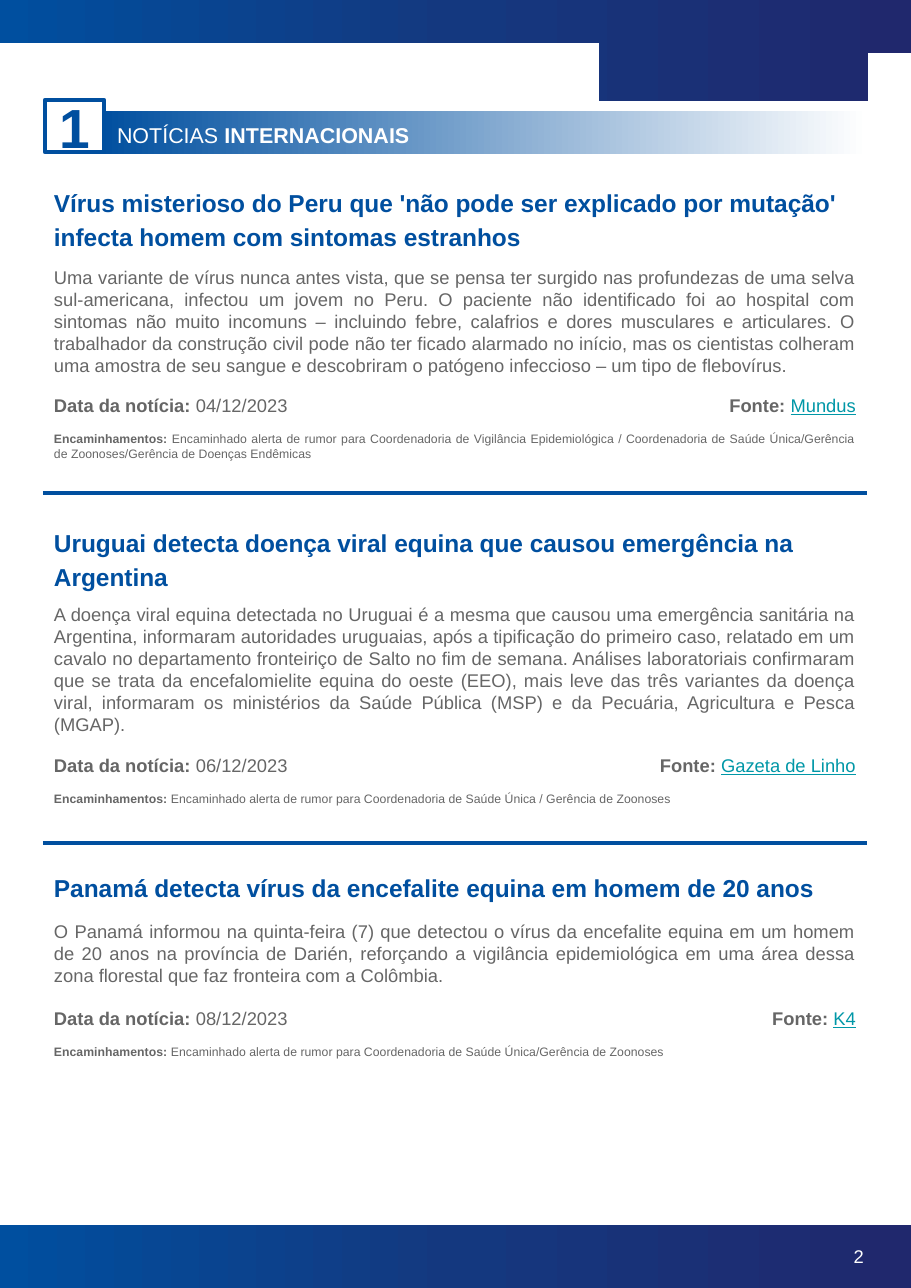
from dataclasses import dataclass
from lxml import etree
from pptx import Presentation
from pptx import util as u
from pptx.dml.color import RGBColor
from pptx.enum import shapes, text
from pptx.oxml.ns import qn

NEWS = [
    {"tops": (173, 255, 383), "rule": 493,
     "head": "Vírus misterioso do Peru que 'não pode ser explicado por mutação' infecta homem com sintomas estranhos",
     "body": "Uma variante de vírus nunca antes vista, que se pensa ter surgido nas profundezas de uma selva sul-americana, infectou um jovem no Peru. O paciente não identificado foi ao hospital com sintomas não muito incomuns – incluindo febre, calafrios e dores musculares e articulares. O trabalhador da construção civil pode não ter ficado alarmado no início, mas os cientistas colheram uma amostra de seu sangue e descobriram o patógeno infeccioso – um tipo de flebovírus.",
     "date": "04/12/2023", "source": "Mundus",
     "action": "Encaminhado alerta de rumor para Coordenadoria de Vigilância Epidemiológica / Coordenadoria de Saúde Única/Gerência de Zoonoses/Gerência de Doenças Endêmicas"},
    {"tops": (513, 592, 743), "rule": 843,
     "head": "Uruguai detecta doença viral equina que causou emergência na Argentina",
     "body": "A doença viral equina detectada no Uruguai é a mesma que causou uma emergência sanitária na Argentina, informaram autoridades uruguaias, após a tipificação do primeiro caso, relatado em um cavalo no departamento fronteiriço de Salto no fim de semana. Análises laboratoriais confirmaram que se trata da encefalomielite equina do oeste (EEO), mais leve das três variantes da doença viral, informaram os ministérios da Saúde Pública (MSP) e da Pecuária, Agricultura e Pesca (MGAP).",
     "date": "06/12/2023", "source": "Gazeta de Linho",
     "action": "Encaminhado alerta de rumor para Coordenadoria de Saúde Única / Gerência de Zoonoses"},
    {"tops": (858, 909, 996), "rule": None,
     "head": "Panamá detecta vírus da encefalite equina em homem de 20 anos",
     "body": "O Panamá informou na quinta-feira (7) que detectou o vírus da encefalite equina em um homem de 20 anos na província de Darién, reforçando a vigilância epidemiológica em uma área dessa zona florestal que faz fronteira com a Colômbia.",
     "date": "08/12/2023", "source": "K4",
     "action": "Encaminhado alerta de rumor para Coordenadoria de Saúde Única/Gerência de Zoonoses"},
]
WIDE, HIGH = 911, 1288
LEFT, SPAN = 43, 824
PAD = 11
SCALE = 914400 / 110.2


@dataclass(frozen=True)
class Theme:
    blue: str = "004F9F"
    mid: str = "14387F"
    navy: str = "20286D"
    white: str = "FFFFFF"
    gray: str = "666666"
    teal: str = "0097A7"
    font: str = "Arial"
    small: int = 8
    base: int = 12
    label: int = 14
    head: int = 16
    digit: int = 36


T = Theme()
BAND = (T.blue, T.mid, T.navy)
ALIGN = text.PP_ALIGN


def px(n):
    return u.Emu(round(n * SCALE))


def rgb(code):
    return RGBColor.from_string(code)


def paint(shape, tones):
    if isinstance(tones, str):
        shape.fill.solid()
        shape.fill.fore_color.rgb = rgb(tones)
        return
    shape.fill.gradient()
    shape.fill.gradient_angle = 0
    stops = shape._element.spPr.find(".//" + qn("a:gsLst"))
    for stop in list(stops):
        stops.remove(stop)
    for i, tone in enumerate(tones):
        stop = etree.SubElement(stops, qn("a:gs"), pos=str(100000 * i // (len(tones) - 1)))
        etree.SubElement(stop, qn("a:srgbClr"), val=tone)


def block(slide, box, tones):
    shape = slide.shapes.add_shape(shapes.MSO_SHAPE.RECTANGLE, *map(px, box))
    shape.shadow.inherit = False
    shape.line.fill.background()
    paint(shape, tones)
    return shape


def frame(shape, anchor=text.MSO_ANCHOR.TOP, left=PAD):
    area = shape.text_frame
    area.auto_size = text.MSO_AUTO_SIZE.NONE
    area.word_wrap = True
    area.vertical_anchor = anchor
    area.margin_left = px(left)
    area.margin_top = area.margin_right = area.margin_bottom = px(PAD)
    return area


def write(para, parts, size, color, align=ALIGN.LEFT):
    para.alignment = align
    for words, bold in parts:
        run = para.add_run()
        run.text = words
        run.font.size = u.Pt(size)
        run.font.bold = bold
        run.font.name = T.font
        run.font.color.rgb = rgb(color)


def note(slide, box, parts, size, color, align=ALIGN.LEFT, anchor=text.MSO_ANCHOR.TOP):
    area = frame(slide.shapes.add_textbox(*map(px, box)), anchor)
    write(area.paragraphs[0], parts, size, color, align)
    return area


def rule(slide, y):
    line = slide.shapes.add_connector(
        shapes.MSO_CONNECTOR.STRAIGHT, px(LEFT), px(y), px(LEFT + SPAN), px(y))
    line.line.color.rgb = rgb(T.blue)
    line.line.width = u.Pt(3)
    etree.SubElement(line._element.spPr, qn("a:effectLst"))


def story(slide, item):
    top, mid, low = item["tops"]
    head = note(slide, (LEFT, top, SPAN, mid - top), [(item["head"], True)], T.head, T.blue)
    para = head.paragraphs[0]
    para.line_spacing = 1.15
    para.space_before = para.space_after = u.Pt(12)
    note(slide, (LEFT, mid, SPAN, low - mid), [(item["body"], False)],
         T.base, T.gray, ALIGN.JUSTIFY)
    foot = note(slide, (LEFT, low, SPAN, 75),
                [("Data da notícia: ", True), (item["date"], False)],
                T.base, T.gray, ALIGN.JUSTIFY)
    para = foot.add_paragraph()
    para.space_before = para.space_after = u.Pt(10)
    write(para, [("Encaminhamentos: ", True), (item["action"], False)],
          T.small, T.gray, ALIGN.JUSTIFY)
    half = SPAN // 2
    origin = note(slide, (LEFT + half, low, half, 44),
                  [("Fonte: ", True), (item["source"], False)],
                  T.base, T.gray, ALIGN.RIGHT)
    link = origin.paragraphs[0].runs[-1].font
    link.underline = True
    link.color.rgb = rgb(T.teal)
    if item["rule"]:
        rule(slide, item["rule"])


def main():
    deck = Presentation()
    deck.slide_width, deck.slide_height = px(WIDE), px(HIGH)
    slide = deck.slides.add_slide(deck.slide_layouts[5])

    block(slide, (0, 1225, WIDE, HIGH - 1225), BAND)
    block(slide, (0, 23, WIDE, 78), BAND)
    block(slide, (0, 43, 599, 64), T.white)
    block(slide, (0, 0, WIDE, 43), BAND)
    block(slide, (868, 53, WIDE - 868, 54), T.white)

    title = slide.shapes.title
    title.left, title.top, title.width, title.height = map(px, (100, 111, 768, 43))
    paint(title, (T.blue, T.white))
    write(frame(title, left=17).paragraphs[0],
          [("NOTÍCIAS ", False), ("INTERNACIONAIS", True)], T.label, T.white)

    badge = block(slide, (45, 100, 59, 52), T.white)
    badge.line.color.rgb = rgb(T.blue)
    badge.line.width = u.Pt(3)
    write(frame(badge, text.MSO_ANCHOR.MIDDLE).paragraphs[0], [("1", True)],
          T.digit, T.blue, ALIGN.CENTER)

    for item in NEWS:
        story(slide, item)
    note(slide, (820, 1225, 55, HIGH - 1225), [("2", False)], T.base, T.white,
         ALIGN.RIGHT, text.MSO_ANCHOR.MIDDLE)
    deck.save("out.pptx")


if __name__ == "__main__":
    main()
